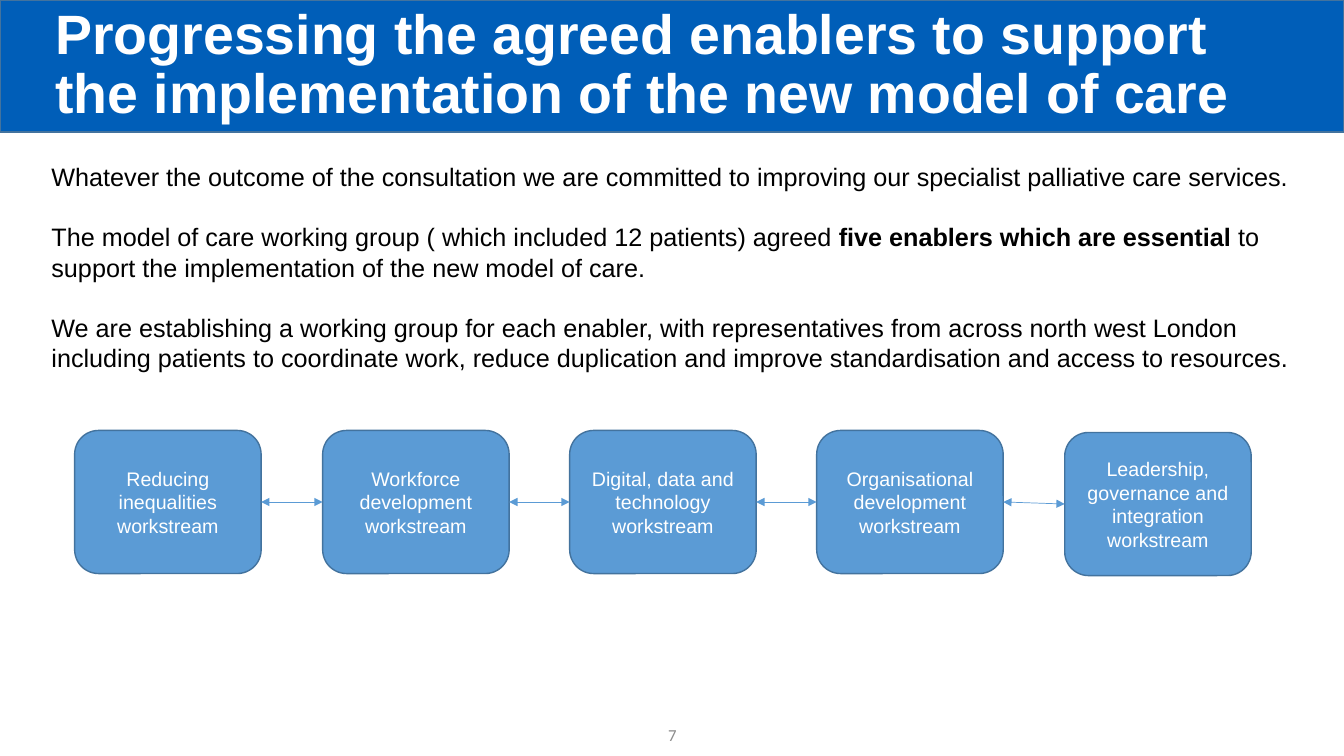
from dataclasses import dataclass

from lxml import etree
from pptx import Presentation, util as u
from pptx.dml.color import RGBColor
from pptx.enum import shapes, text
from pptx.oxml.ns import qn

EMU_PER_PX = 9144  # 100 px to the inch


@dataclass(frozen=True)
class Theme:
    font: str = "Arial"
    number_font: str = "Calibri"
    band: str = "005EB8"
    box: str = "5B9BD5"
    outline: str = "43739E"
    light: str = "FFFFFF"
    ink: str = "000000"
    muted: str = "8C8C8C"
    title_size: float = 39.6
    body_size: float = 18
    box_size: float = 14
    number_size: float = 12
    paragraph_gap: float = 21.6


@dataclass(frozen=True)
class Box:
    left: int
    top: int
    width: int
    height: int

    def emu(self) -> tuple[int, ...]:
        return tuple(px(value) for value in (self.left, self.top, self.width, self.height))


@dataclass(frozen=True)
class Workstream:
    label: str
    top: int = 427


THEME = Theme()
SLIDE_WIDTH, SLIDE_HEIGHT = 1333, 750
BAND = Box(0, 0, SLIDE_WIDTH, 131)
TITLE = Box(45, 36, 1244, 59)
BODY = Box(41, 155, 1248, 222)
NUMBER = Box(517, 709, 300, 40)
FIRST_LEFT, BOX_PITCH, BOX_WIDTH, BOX_HEIGHT = 74, 245.5, 185, 142

TITLE_TEXT = "Progressing the agreed enablers to support the implementation of the new model of care"
# Each paragraph is a list of (wording, bold) pieces.
BODY_TEXT = [
    [("Whatever the outcome of the consultation we are committed to improving our "
      "specialist palliative care services.", False)],
    [("The model of care working group ( which included 12 patients) agreed ", False),
     ("five enablers which are essential ", True),
     ("to support the implementation of the new model of care.", False)],
    [("We are establishing a working group for each enabler, with representatives from "
      "across north west London including patients to coordinate work, reduce duplication "
      "and improve standardisation and access to resources.", False)],
]
WORKSTREAMS = [
    Workstream("Reducing inequalities workstream"),
    Workstream("Workforce development workstream"),
    Workstream("Digital, data and technology workstream"),
    Workstream("Organisational development workstream"),
    Workstream("Leadership, governance and integration workstream", top=429),
]


def px(value: int) -> int:
    return u.Emu(value * EMU_PER_PX)


def place(shape, box: Box) -> None:
    shape.left, shape.top, shape.width, shape.height = box.emu()


def format_run(run, size: float, color: str, bold: bool = False, font: str = THEME.font) -> None:
    run.font.name, run.font.size, run.font.bold = font, u.Pt(size), bold
    run.font.color.rgb = RGBColor.from_string(color)


def add_filled(slide, kind, box: Box, fill: str):
    shape = slide.shapes.add_shape(kind, *box.emu())
    shape.shadow.inherit = False
    shape.fill.solid()
    shape.fill.fore_color.rgb = RGBColor.from_string(fill)
    shape.line.color.rgb = RGBColor.from_string(THEME.outline)
    shape.line.width = u.Pt(1)
    return shape


def add_heading(slide) -> None:
    title = slide.shapes.title
    place(title, TITLE)
    frame = title.text_frame
    frame.text = TITLE_TEXT
    frame.word_wrap = True
    frame.auto_size = text.MSO_AUTO_SIZE.NONE
    frame.vertical_anchor = text.MSO_ANCHOR.MIDDLE
    paragraph = frame.paragraphs[0]
    paragraph.alignment = text.PP_ALIGN.LEFT
    paragraph.line_spacing = 0.9
    format_run(paragraph.runs[0], THEME.title_size, THEME.light, bold=True)
    band = add_filled(slide, shapes.MSO_SHAPE.RECTANGLE, BAND, THEME.band)
    title._element.addprevious(band._element)  # keeps the band behind the title


def add_body(slide) -> None:
    body = slide.placeholders[1]
    place(body, BODY)
    frame = body.text_frame
    frame.word_wrap = True
    frame.auto_size = text.MSO_AUTO_SIZE.NONE
    for index, pieces in enumerate(BODY_TEXT):
        paragraph = frame.add_paragraph() if index else frame.paragraphs[0]
        properties = paragraph._p.get_or_add_pPr()
        properties.set("marL", "0")
        properties.set("indent", "0")
        etree.SubElement(properties, qn("a:buNone"))
        paragraph.space_before = u.Pt(THEME.paragraph_gap if index else 0)
        for wording, bold in pieces:
            run = paragraph.add_run()
            run.text = wording
            format_run(run, THEME.body_size, THEME.ink, bold)


def add_workstream(slide, index: int, workstream: Workstream):
    left = FIRST_LEFT + round(index * BOX_PITCH)
    box = Box(left, workstream.top, BOX_WIDTH, BOX_HEIGHT)
    shape = add_filled(slide, shapes.MSO_SHAPE.ROUNDED_RECTANGLE, box, THEME.box)
    frame = shape.text_frame
    frame.text = workstream.label
    frame.word_wrap = True
    frame.vertical_anchor = text.MSO_ANCHOR.MIDDLE
    paragraph = frame.paragraphs[0]
    paragraph.alignment = text.PP_ALIGN.CENTER
    format_run(paragraph.runs[0], THEME.box_size, THEME.light)
    return shape


def link(slide, start, end) -> None:
    """Join two neighbouring boxes with a double-headed arrow."""
    connector = slide.shapes.add_connector(shapes.MSO_CONNECTOR.STRAIGHT, 0, 0, 0, 0)
    connector.begin_connect(start, 3)
    connector.end_connect(end, 1)
    connector.line.color.rgb = RGBColor.from_string(THEME.box)
    connector.line.width = u.Pt(0.5)
    line = connector.line._get_or_add_ln()
    for tag in ("a:headEnd", "a:tailEnd"):
        etree.SubElement(line, qn(tag), type="triangle")
    etree.SubElement(connector._element.spPr, qn("a:effectLst"))


def add_slide_number(slide) -> None:
    frame = slide.shapes.add_textbox(*NUMBER.emu()).text_frame
    frame.text = "7"
    frame.word_wrap = True
    frame.vertical_anchor = text.MSO_ANCHOR.MIDDLE
    paragraph = frame.paragraphs[0]
    paragraph.alignment = text.PP_ALIGN.CENTER
    format_run(paragraph.runs[0], THEME.number_size, THEME.muted, font=THEME.number_font)


def main() -> None:
    presentation = Presentation()
    presentation.slide_width, presentation.slide_height = px(SLIDE_WIDTH), px(SLIDE_HEIGHT)
    slide = presentation.slides.add_slide(presentation.slide_layouts[1])
    add_heading(slide)
    add_body(slide)
    boxes = [add_workstream(slide, index, item) for index, item in enumerate(WORKSTREAMS)]
    for start, end in zip(boxes, boxes[1:]):
        link(slide, start, end)
    add_slide_number(slide)
    presentation.save("out.pptx")


if __name__ == "__main__":
    main()
